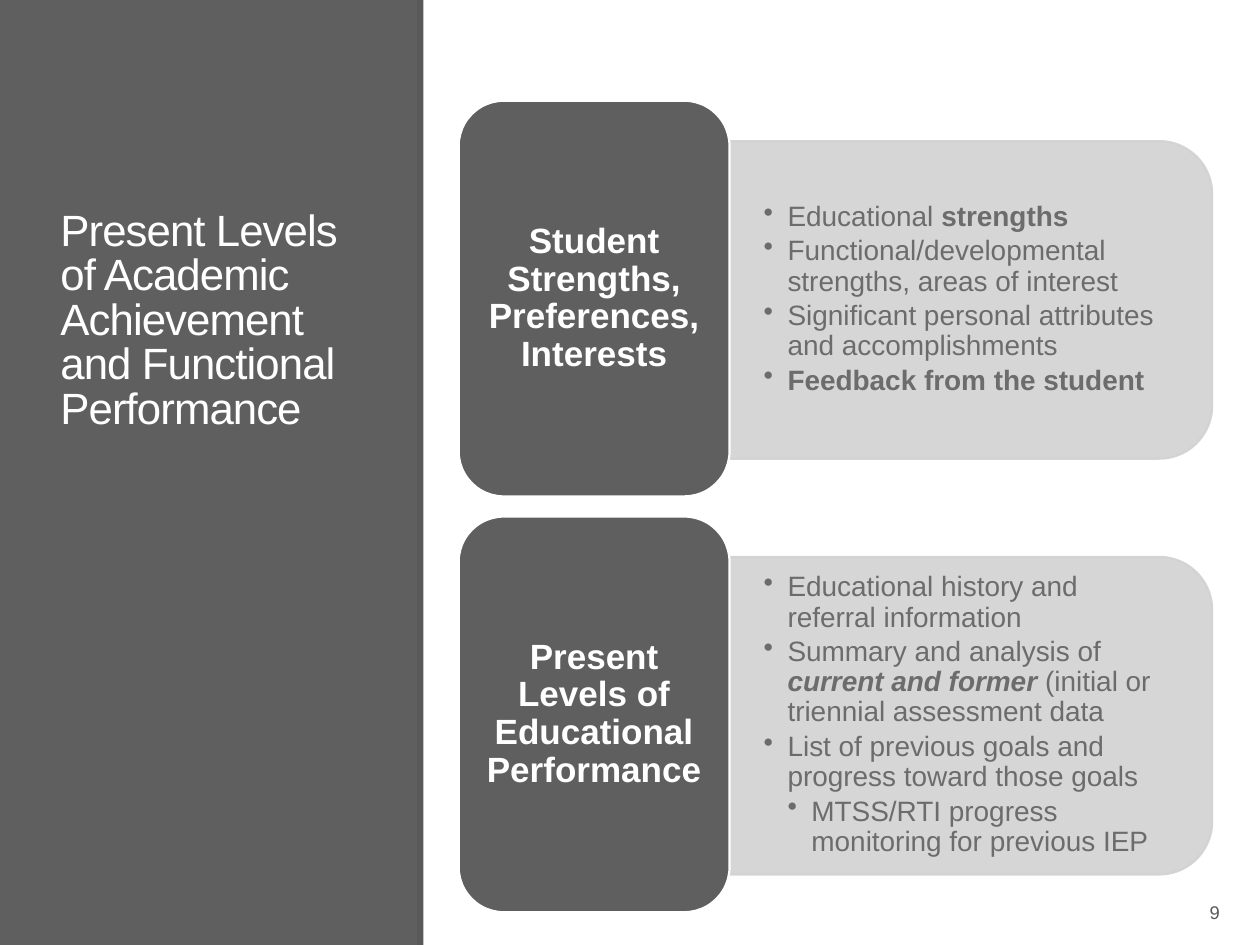
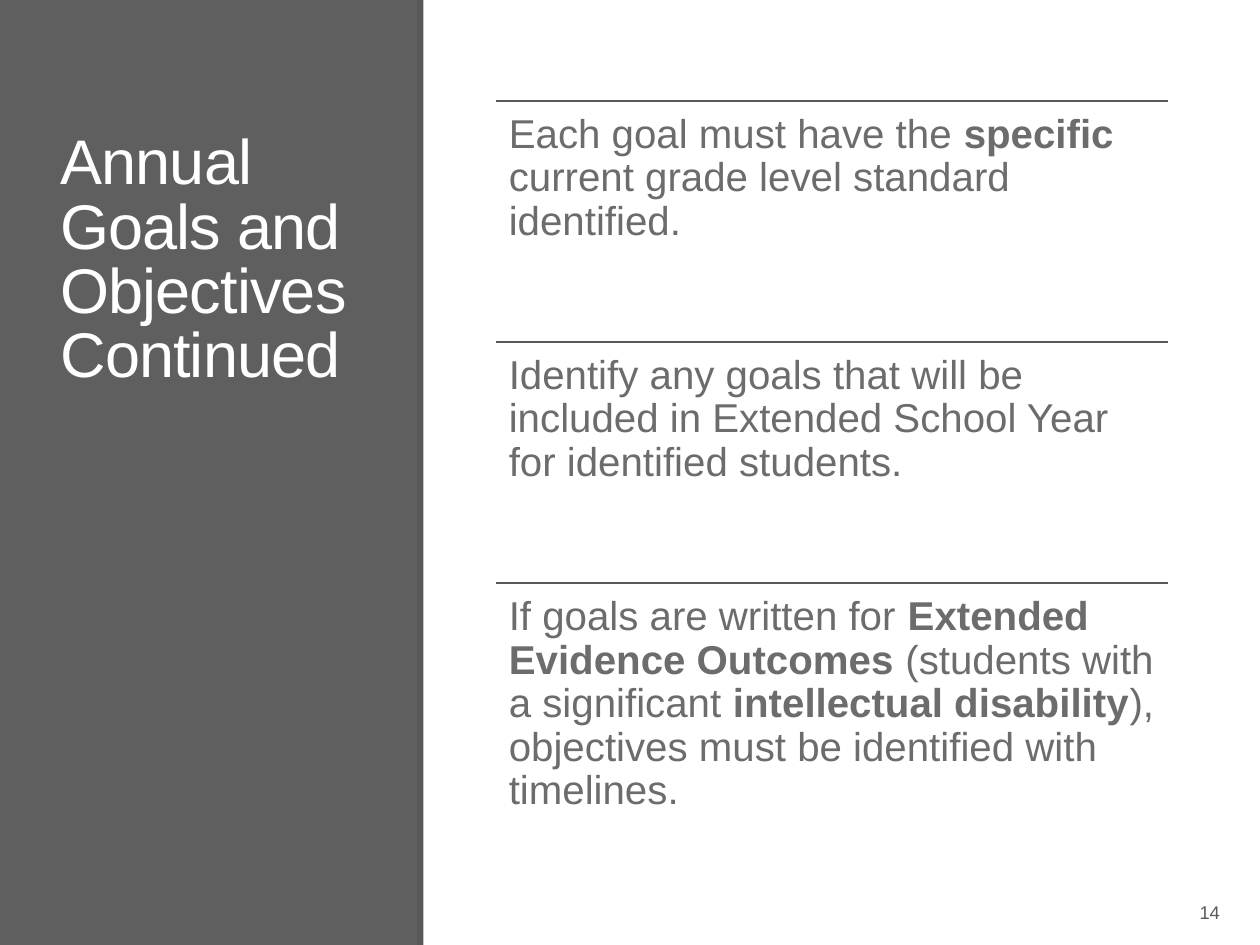
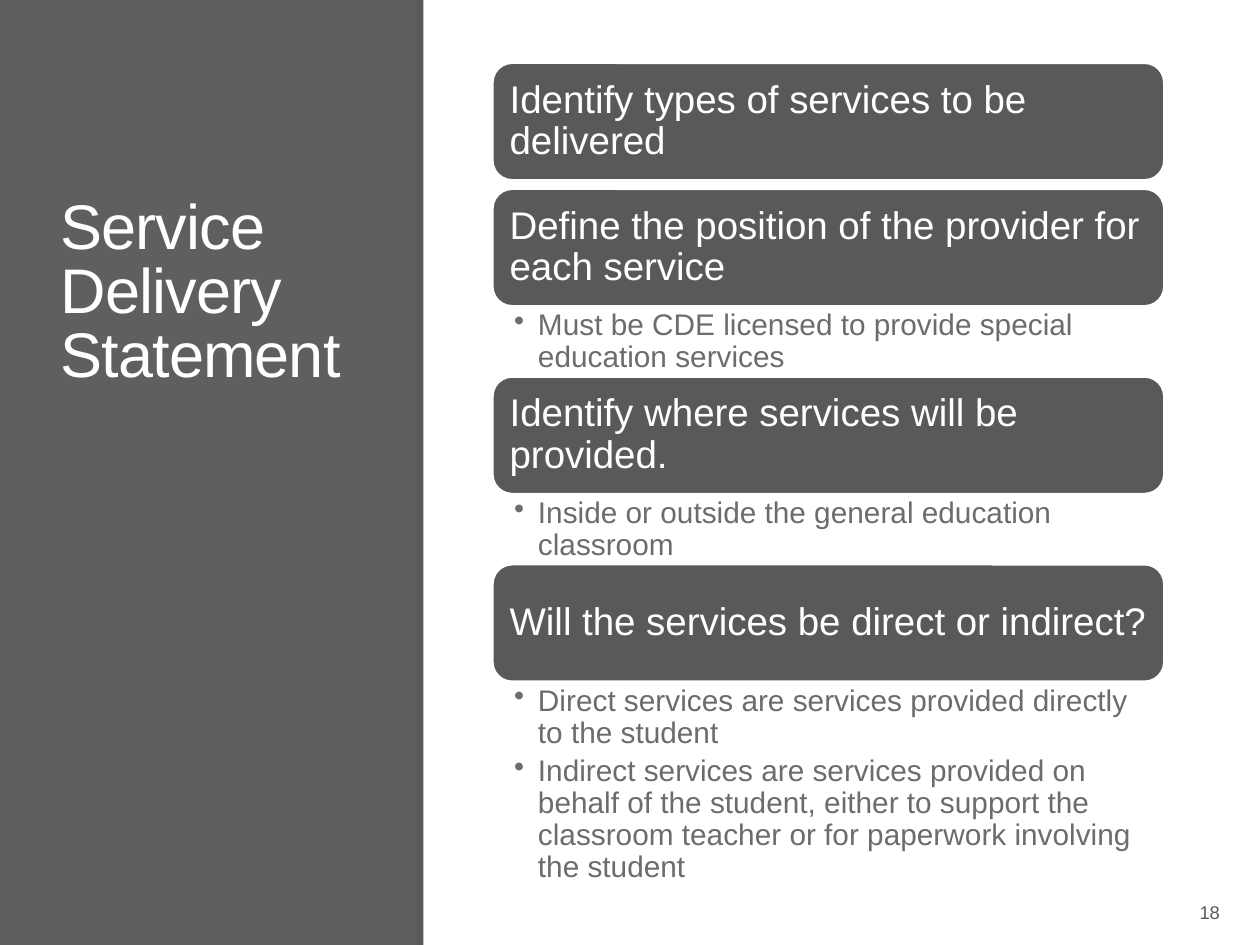
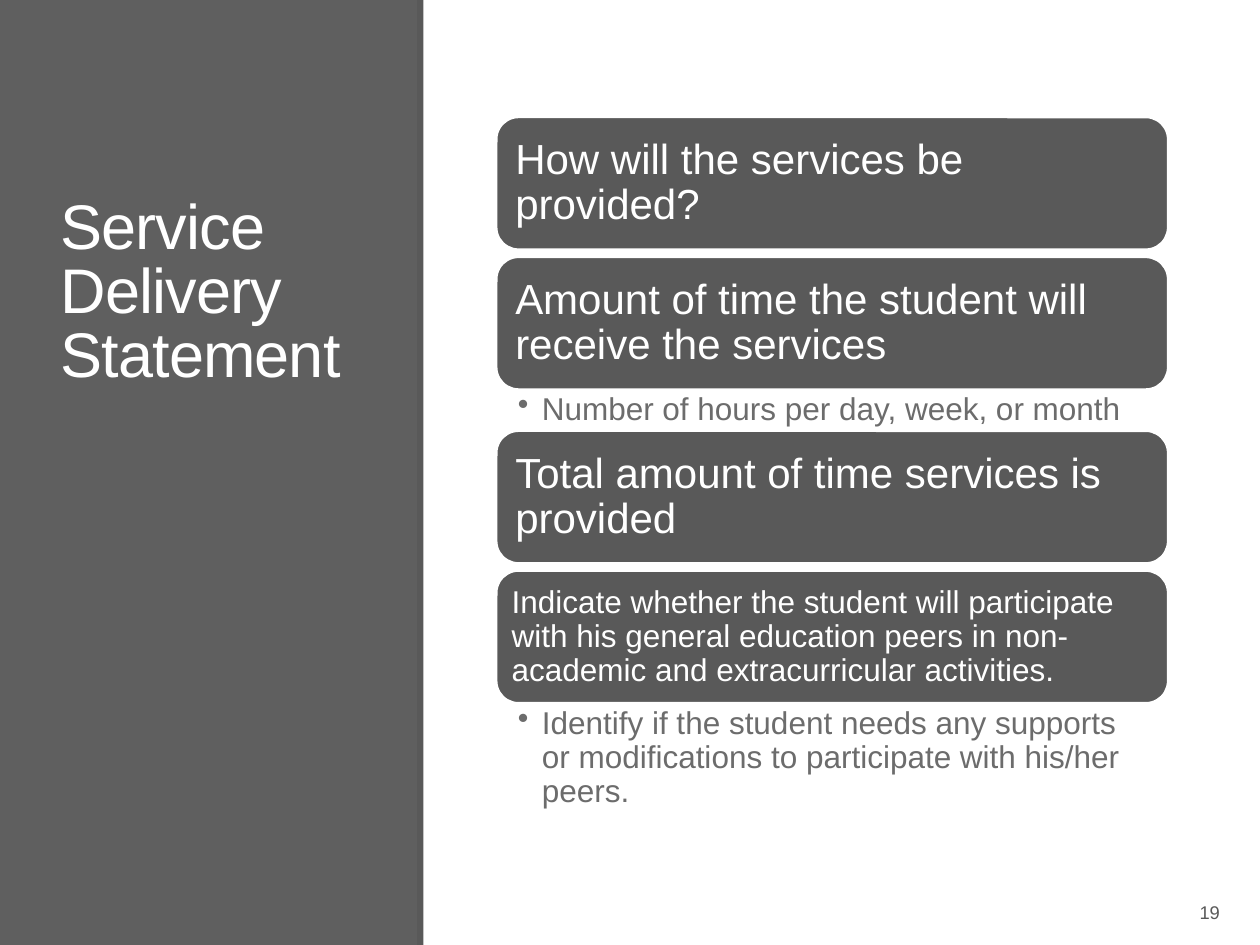
from dataclasses import dataclass
from typing import NamedTuple

from lxml import etree
from pptx import Presentation
from pptx import util as u
from pptx.dml.color import RGBColor
from pptx.enum import shapes, text
from pptx.oxml import ns

FONT = "Arial"
WHITE, PANEL, DARK, BODY, PALE = "FFFFFF", "5F5F5F", "595959", "6C6C6C", "D2D2D2"
LINE_WIDTH = 1.25
BULLET_INDENT = 0.19
LEFT, CENTER, RIGHT = text.PP_ALIGN.LEFT, text.PP_ALIGN.CENTER, text.PP_ALIGN.RIGHT
TOP, MIDDLE, BOTTOM = text.MSO_ANCHOR.TOP, text.MSO_ANCHOR.MIDDLE, text.MSO_ANCHOR.BOTTOM


class Box(NamedTuple):
    left: float
    top: float
    width: float
    height: float


class Words(NamedTuple):
    content: str
    bold: bool = False
    italic: bool = False


class Para(NamedTuple):
    words: tuple[Words, ...]
    level: int = 0


@dataclass(frozen=True)
class Style:
    size: float
    color: str
    align: text.PP_ALIGN = LEFT
    anchor: text.MSO_ANCHOR = MIDDLE
    inset_x: float = 0.1
    inset_y: float = 0.05
    spacing: float = 0.9
    after: float = 0
    tracking: int = 0


@dataclass(frozen=True)
class Topic:
    heading: str
    details: tuple[Para, ...]


@dataclass(frozen=True)
class Step:
    heading: str
    details: tuple[Para, ...] = ()
    details_height: float = 0
    size: float = 0
    inset: float = 0


@dataclass(frozen=True)
class StepList:
    left: float
    top: float
    card_height: float
    gap: float
    size: float
    inset: float
    detail_size: float
    steps: tuple[Step, ...]


def plain(content: str, level: int = 0, bold: bool = False) -> Para:
    return Para((Words(content, bold),), level)


def rgb(color: str) -> RGBColor:
    return RGBColor.from_string(color)


def inches(box: Box) -> list[u.Length]:
    return [u.Inches(length) for length in box]


def write(frame, paras: tuple[Para, ...], style: Style) -> None:
    frame.word_wrap = True
    frame.auto_size = text.MSO_AUTO_SIZE.NONE
    frame.vertical_anchor = style.anchor
    frame.margin_left = frame.margin_right = u.Inches(style.inset_x)
    frame.margin_top = frame.margin_bottom = u.Inches(style.inset_y)
    for index, para in enumerate(paras):
        paragraph = frame.add_paragraph() if index else frame.paragraphs[0]
        if para.level:
            properties = paragraph._p.get_or_add_pPr()
            properties.set("marL", str(u.Inches(BULLET_INDENT * para.level)))
            properties.set("indent", str(u.Inches(-BULLET_INDENT)))
            etree.SubElement(properties, ns.qn("a:buChar")).set("char", "•")
            paragraph.level = para.level
        paragraph.alignment = style.align
        paragraph.line_spacing = style.spacing
        paragraph.space_before = u.Pt(0)
        paragraph.space_after = u.Pt(style.after * style.size)
        for words in para.words:
            run = paragraph.add_run()
            run.text = words.content
            run.font.name = FONT
            run.font.size = u.Pt(style.size)
            run.font.color.rgb = rgb(style.color)
            run.font.bold = words.bold
            run.font.italic = words.italic
            if style.tracking:
                run._r.get_or_add_rPr().set("spc", str(style.tracking))


def add_text(slide, box: Box, paras: tuple[Para, ...], style: Style) -> None:
    write(slide.shapes.add_textbox(*inches(box)).text_frame, paras, style)


def add_panel(slide, kind: shapes.MSO_SHAPE, box: Box, fill: str, line: str = ""):
    panel = slide.shapes.add_shape(kind, *inches(box))
    panel.shadow.inherit = False
    panel.fill.solid()
    panel.fill.fore_color.rgb = rgb(fill)
    if line:
        panel.line.color.rgb = rgb(line)
        panel.line.width = u.Pt(LINE_WIDTH)
    else:
        panel.line.fill.background()
    return panel


def add_card(slide, box: Box, fill: str, heading: Para, style: Style) -> None:
    card = add_panel(slide, shapes.MSO_SHAPE.ROUNDED_RECTANGLE, box, fill, WHITE)
    write(card.text_frame, (heading,), style)


def add_rule(slide, left: float, top: float, width: float) -> None:
    ends = [u.Inches(v) for v in (left, top, left + width, top)]
    rule = slide.shapes.add_connector(shapes.MSO_CONNECTOR.STRAIGHT, *ends)
    rule.line.color.rgb = rgb(DARK)
    rule.line.width = u.Pt(LINE_WIDTH)
    etree.SubElement(rule._element.spPr, ns.qn("a:effectLst"))


def add_side_band(layout, slide) -> None:
    for box, color in ((Box(0, 0, 3.32, 7.5), PANEL), (Box(3.31, 0, 0.05, 7.5), DARK)):
        band = add_panel(slide, shapes.MSO_SHAPE.RECTANGLE, box, color)
        layout.shapes.element.append(band._element)


def start_slide(deck, heading: str, number: int, size: float = 36, top: float = 0.65):
    slide = deck.slides.add_slide(deck.slide_layouts[5])
    title = slide.shapes.title
    title.left, title.top, title.width, title.height = inches(Box(0.38, top, 2.62, 2.5))
    write(title.text_frame, (plain(heading),),
          Style(size, WHITE, anchor=BOTTOM, spacing=0.85, tracking=-50))
    add_text(slide, Box(8.7, 7.04, 1.08, 0.4), (plain(str(number)),),
             Style(10.5, DARK, RIGHT, spacing=1, after=0.57))
    return slide


def draw_topics(slide, topics: tuple[Topic, ...]) -> None:
    card_left, card_width, card_height, pitch = 3.64, 2.15, 3.14, 3.3
    tab_length, tab_height = 3.83, 2.52
    tab_left = card_left + card_width
    for index, topic in enumerate(topics):
        card_top = 0.8 + index * pitch
        middle = card_top + card_height / 2 + 0.01
        tab = add_panel(
            slide, shapes.MSO_SHAPE.ROUND_2_SAME_RECTANGLE,
            Box(tab_left + (tab_length - tab_height) / 2, middle - tab_length / 2,
                tab_height, tab_length), PALE, PALE)
        tab.rotation = 90
        for color in tab._element.spPr.iter(ns.qn("a:srgbClr")):
            etree.SubElement(color, ns.qn("a:alpha")).set("val", "90000")
        add_text(slide, Box(tab_left, middle - 1.14, 3.71, 2.27), topic.details,
                 Style(16, BODY, inset_x=0.27, inset_y=0.14, after=0.15))
        add_card(slide, Box(card_left, card_top, card_width, card_height), PANEL,
                 plain(topic.heading, bold=True),
                 Style(20, WHITE, CENTER, inset_x=0.08, inset_y=0.04, after=0.35))


def draw_goals(slide, goals: tuple[Para, ...]) -> None:
    left, width, height = 3.94, 5.33, 1.91
    for index, goal in enumerate(goals):
        top = 0.8 + index * 1.915
        add_rule(slide, left, top, width)
        add_text(slide, Box(left, top, width, height), (goal,),
                 Style(23, BODY, anchor=TOP, inset_y=0.1, after=0.35))


def draw_steps(slide, plan: StepList) -> None:
    width, top = 5.33, plan.top
    detail_style = Style(plan.detail_size, BODY, anchor=TOP, inset_x=0.17,
                         inset_y=0.03, after=0.2)
    for step in plan.steps:
        inset = step.inset or plan.inset
        add_card(slide, Box(plan.left, top, width, plan.card_height), DARK,
                 plain(step.heading),
                 Style(step.size or plan.size, WHITE, inset_x=inset, inset_y=inset, after=0.35))
        top += plan.card_height
        if step.details:
            add_text(slide, Box(plan.left, top, width, step.details_height),
                     step.details, detail_style)
        top += step.details_height or plan.gap


TOPICS = (
    Topic("Student Strengths, Preferences, Interests", (
        Para((Words("Educational "), Words("strengths", bold=True)), 1),
        plain("Functional/developmental strengths, areas of interest", 1),
        plain("Significant personal attributes and accomplishments", 1),
        plain("Feedback from the student", 1, bold=True),
    )),
    Topic("Present Levels of Educational Performance", (
        plain("Educational history and referral information", 1),
        Para((Words("Summary and analysis of "),
              Words("current and former ", bold=True, italic=True),
              Words("(initial or triennial assessment data")), 1),
        plain("List of previous goals and progress toward those goals", 1),
        plain("MTSS/RTI progress monitoring for previous IEP", 2),
    )),
)

GOALS = (
    Para((Words("Each goal must have the "), Words("specific ", bold=True),
          Words("current grade level standard identified."))),
    plain("Identify any goals that will be included in Extended School Year "
          "for identified students."),
    Para((Words("If goals are written for "),
          Words("Extended Evidence Outcomes", bold=True),
          Words(" (students with a significant "),
          Words("intellectual disability", bold=True),
          Words("), objectives must be identified with timelines."))),
)

SERVICE_TYPES = StepList(3.91, 0.5, 0.93, 0.07, 22, 0.09, 17, (
    Step("Identify types of services to be delivered"),
    Step("Define the position of the provider for each service",
         (plain("Must be CDE licensed to provide special education services", 1),), 0.56),
    Step("Identify where services will be provided.",
         (plain("Inside or outside the general education classroom", 1),), 0.56),
    Step("Will the services be direct or indirect?",
         (plain("Direct services are services provided directly to the student", 1),
          plain("Indirect services are services provided on behalf of the student, either to "
                "support the classroom teacher or for paperwork involving the student", 1)),
         1.59),
))

SERVICE_TIME = StepList(3.94, 0.93, 1.05, 0.06, 24, 0.1, 18, (
    Step("How will the services be provided?"),
    Step("Amount of time the student will receive the services",
         (plain("Number of hours per day, week, or month", 1),), 0.33),
    Step("Total amount of time services is provided"),
    Step("Indicate whether the student will participate with his general education peers "
         "in non-academic and extracurricular activities.",
         (plain("Identify if the student needs any supports or modifications to participate "
                "with his/her peers.", 1),), 0.84, size=18, inset=0.07),
))


def main() -> None:
    deck = Presentation()
    deck.slide_width, deck.slide_height = u.Inches(10), u.Inches(7.5)

    levels = start_slide(
        deck, "Present Levels of Academic Achievement and Functional Performance", 9, 25, 0.99)
    add_side_band(deck.slide_layouts[5], levels)
    draw_topics(levels, TOPICS)
    draw_goals(start_slide(deck, "Annual Goals and Objectives Continued", 14), GOALS)
    for number, plan in ((18, SERVICE_TYPES), (19, SERVICE_TIME)):
        draw_steps(start_slide(deck, "Service Delivery Statement", number), plan)

    deck.save("out.pptx")


if __name__ == "__main__":
    main()
